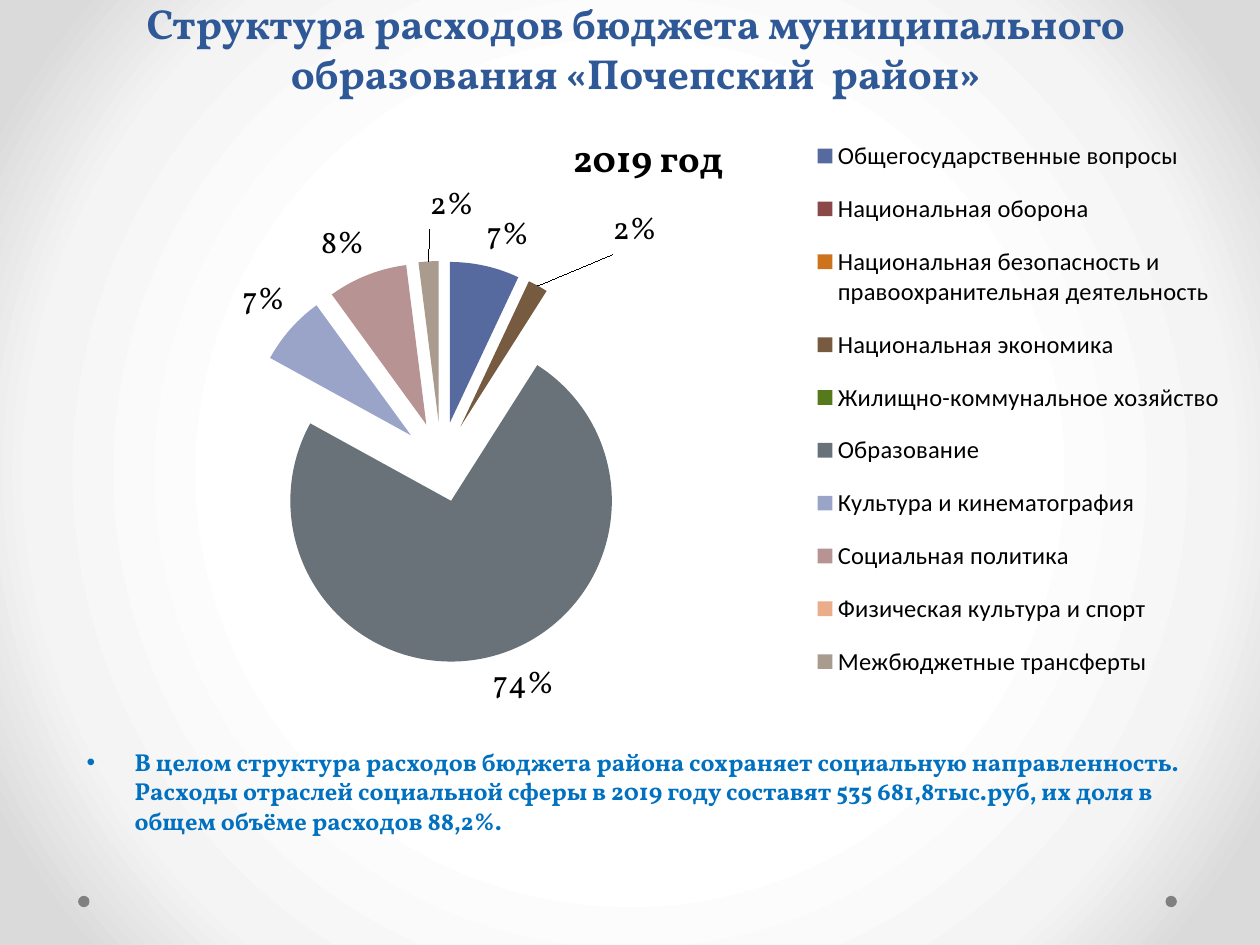
from lxml.etree import SubElement
from pptx import Presentation
from pptx.chart.data import CategoryChartData
from pptx.dml.color import RGBColor
from pptx.enum.chart import XL_CHART_TYPE, XL_LABEL_POSITION, XL_LEGEND_POSITION
from pptx.enum.shapes import MSO_SHAPE
from pptx.enum.text import MSO_ANCHOR, PP_ALIGN
from pptx.oxml import parse_xml
from pptx.oxml.ns import nsdecls, qn
from pptx.util import Inches, Pt

TITLE = "Структура расходов бюджета муниципального образования «Почепский  район»"
CHART_TITLE = "2019 год"
SUMMARY = (
    "В целом структура расходов бюджета района сохраняет социальную направленность. "
    "Расходы отраслей социальной сферы в 2019 году составят 535 681,8тыс.руб, "
    "их доля в общем объёме расходов 88,2%."
)
# Category, percent, slice colour
EXPENSES = [
    ("Общегосударственные вопросы", 7, "566AA0"),
    ("Национальная оборона", 0, "8A4848"),
    ("Национальная безопасность и правоохранительная деятельность", 0, "CD731C"),
    ("Национальная экономика", 2, "775B41"),
    ("Жилищно-коммунальное хозяйство", 0, "567A1B"),
    ("Образование", 74, "687278"),
    ("Культура и кинематография", 7, "9AA4C9"),
    ("Социальная политика", 8, "B89393"),
    ("Физическая культура и спорт", 0, "EBAC8A"),
    ("Межбюджетные трансферты", 2, "AA9B8F"),
]
# Label shifts as shares of the chart; None hides the label
LABEL_SHIFTS = {2: (0.04, -0.06), 3: (0.06, -0.04), 4: (0.06, 0.02), 8: None, 9: (0.02, -0.04)}
EXPLOSION = 25
COLOURS = {"title": "2F5897", "summary": "0070C0", "dot": "808080", "black": "000000"}
BACKGROUND_STOPS = [(50, "FFFFFF"), (76, "F4F4F4"), (92, "DADADA")]
FONT, LEGEND_FONT = "Vollkorn", "Calibri"
WIDTH, HEIGHT = 10, 7.5


def set_font(font, size, colour="black", name=FONT, bold=False):
    font.name, font.size, font.bold = name, Pt(size), bold
    font.color.rgb = RGBColor.from_string(COLOURS[colour])


def add_text(slide, text, box, size, colour, anchor=MSO_ANCHOR.TOP, align=PP_ALIGN.LEFT):
    frame = slide.shapes.add_textbox(*map(Inches, box)).text_frame
    frame.word_wrap = True
    frame.vertical_anchor = anchor
    paragraph = frame.paragraphs[0]
    paragraph.alignment = align
    run = paragraph.add_run()
    run.text = text
    set_font(run.font, size, colour, bold=True)
    return paragraph


def add_bullet(paragraph, indent):
    properties = paragraph._p.get_or_add_pPr()
    properties.set("marL", str(Inches(indent)))
    properties.set("indent", str(-Inches(indent)))
    SubElement(properties, qn("a:buFont")).set("typeface", "Arial")
    SubElement(properties, qn("a:buChar")).set("char", "•")


def set_background(slide):
    slide.background.fill.solid()
    stops = "".join(
        f'<a:gs pos="{share * 1000}"><a:srgbClr val="{colour}"/></a:gs>'
        for share, colour in BACKGROUND_STOPS
    )
    gradient = parse_xml(
        f'<a:gradFill {nsdecls("a")} rotWithShape="1"><a:gsLst>{stops}</a:gsLst>'
        '<a:path path="circle"><a:fillToRect l="50000" t="50000" r="50000" b="50000"/>'
        "</a:path></a:gradFill>"
    )
    solid = slide._element.xpath(".//p:bgPr/a:solidFill")[0]
    solid.getparent().replace(solid, gradient)


def layout_xml(x, y, width=None, height=None, inner=False):
    """Manual chart layout in shares of the chart's size."""
    target = '<c:layoutTarget val="inner"/>' if inner else ""
    modes = '<c:xMode val="edge"/><c:yMode val="edge"/>'
    size = f'<c:w val="{width}"/><c:h val="{height}"/>' if width else ""
    return (
        f'<c:layout {nsdecls("c")}><c:manualLayout>{target}{modes}'
        f'<c:x val="{x}"/><c:y val="{y}"/>{size}</c:manualLayout></c:layout>'
    )


def place(element, after, **layout):
    for old in element.findall(qn("c:layout")):
        element.remove(old)
    new = parse_xml(layout_xml(**layout))
    if after:
        element.find(qn(after)).addnext(new)
    else:
        element.insert(0, new)


def label_xml(index, shift):
    if shift is None:
        content = '<c:delete val="1"/>'
    else:
        shown = "".join(
            f'<c:show{part} val="{int(part == "Percent")}"/>'
            for part in ("LegendKey", "Val", "CatName", "SerName", "Percent", "BubbleSize")
        )
        content = (
            f'<c:layout><c:manualLayout><c:x val="{shift[0]}"/><c:y val="{shift[1]}"/>'
            f'</c:manualLayout></c:layout><c:dLblPos val="outEnd"/>{shown}'
        )
    return f'<c:dLbl {nsdecls("c")}><c:idx val="{index}"/>{content}</c:dLbl>'


def add_expense_chart(slide):
    data = CategoryChartData()
    data.categories = [name for name, _, _ in EXPENSES]
    data.add_series("Series 1", [value for _, value, _ in EXPENSES])
    box = map(Inches, (0.43, 0.84, 9.45, 4.96))
    chart = slide.shapes.add_chart(XL_CHART_TYPE.PIE, *box, data).chart
    set_font(chart.font, 18)

    chart.has_title = True
    title = chart.chart_title.text_frame
    title.text = CHART_TITLE
    set_font(title.paragraphs[0].runs[0].font, 21.6, bold=True)
    place(chart.chart_title._element, "c:tx", x=0.43, y=0.03)

    chart.has_legend = True
    chart.legend.position = XL_LEGEND_POSITION.RIGHT
    chart.legend.include_in_layout = False
    set_font(chart.legend.font, 14, name=LEGEND_FONT)
    place(chart.legend._element, "c:legendPos", x=0.63, y=0.02, width=0.36, height=0.93)

    plot = chart.plots[0]
    plot.vary_by_categories = True
    place(chart._chartSpace.chart.plotArea, None,
          x=0.19, y=0.31, width=0.27, height=0.52, inner=True)
    series = plot.series[0]
    for index, (_, _, colour) in enumerate(EXPENSES):
        point = series.points[index]
        point.format.fill.solid()
        point.format.fill.fore_color.rgb = RGBColor.from_string(colour)
    for properties in series._element.xpath("c:dPt/c:spPr"):
        properties.addprevious(
            parse_xml(f'<c:explosion {nsdecls("c")} val="{EXPLOSION}"/>'))

    labels = series.data_labels
    labels.show_value = False
    labels.show_percentage = True
    labels.position = XL_LABEL_POSITION.OUTSIDE_END
    set_font(labels.font, 18)
    for position, (index, shift) in enumerate(LABEL_SHIFTS.items()):
        labels._element.insert(position, parse_xml(label_xml(index, shift)))


def add_dot(slide, left):
    box = map(Inches, (left, 7.11, 0.09, 0.09))
    dot = slide.shapes.add_shape(MSO_SHAPE.OVAL, *box)
    dot.shadow.inherit = False
    dot.fill.solid()
    dot.fill.fore_color.rgb = RGBColor.from_string(COLOURS["dot"])
    dot.line.fill.background()


def main():
    presentation = Presentation()
    presentation.slide_width, presentation.slide_height = Inches(WIDTH), Inches(HEIGHT)
    slide = presentation.slides.add_slide(presentation.slide_layouts[6])
    set_background(slide)
    for left in (9.25, 0.62):
        add_dot(slide, left)
    add_expense_chart(slide)
    add_text(slide, TITLE, (0.2, 0.31, 9.69, 0.52), 24, "title",
             anchor=MSO_ANCHOR.BOTTOM, align=PP_ALIGN.CENTER)
    summary = add_text(slide, SUMMARY, (0.59, 5.88, 9, 0.82), 14, "summary")
    summary.space_before = Pt(2.8)
    add_bullet(summary, 0.38)
    presentation.save("out.pptx")


if __name__ == "__main__":
    main()
